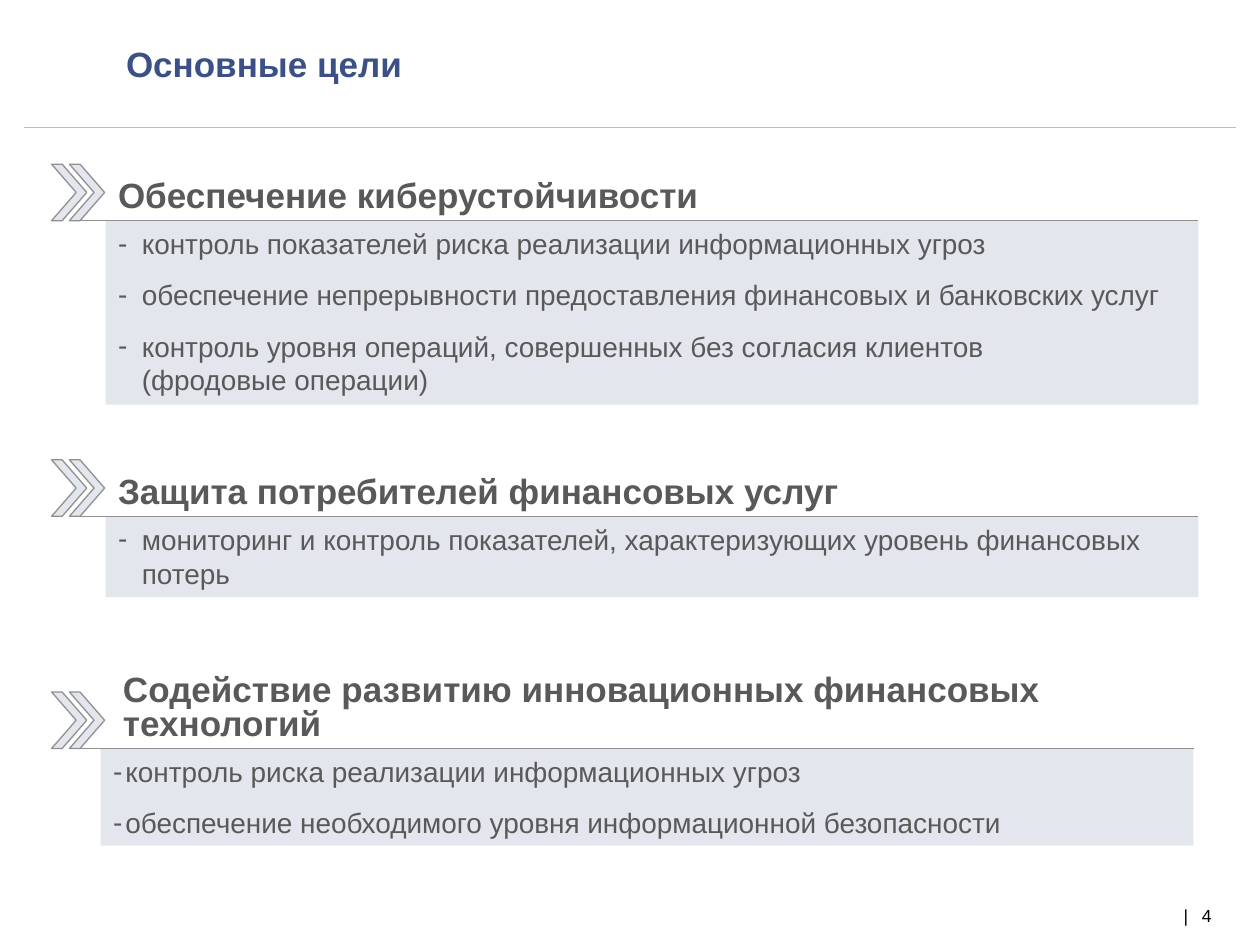
from lxml import etree
from pptx import Presentation
from pptx.dml.color import RGBColor
from pptx.enum.shapes import MSO_CONNECTOR, MSO_SHAPE
from pptx.enum.text import MSO_ANCHOR, PP_ALIGN
from pptx.oxml.ns import qn
from pptx.util import Cm, Pt

STRAIGHT = MSO_CONNECTOR.STRAIGHT
CHEVRON, RECT = MSO_SHAPE.CHEVRON, MSO_SHAPE.RECTANGLE
TOP, MIDDLE = MSO_ANCHOR.TOP, MSO_ANCHOR.MIDDLE
LEFT, RIGHT = PP_ALIGN.LEFT, PP_ALIGN.RIGHT

FONT = "Arial"
NAVY, GREY, BLACK = "3A5086", "595959", "000000"
PALE, OUTLINE, RULE = "E3E7ED", "909090", "BCBCBC"

SECTIONS = [
    dict(y=4.45, title="Обеспечение киберустойчивости", panel_h=3.71,
         items=["контроль показателей риска реализации информационных угроз",
                "обеспечение непрерывности предоставления финансовых и банковских услуг",
                "контроль уровня операций, совершенных без согласия клиентов\n"
                "(фродовые операции)"]),
    dict(y=10.41, title="Защита потребителей финансовых услуг", panel_h=1.63,
         items=["мониторинг и контроль показателей, характеризующих уровень "
                "финансовых потерь"]),
    dict(y=15.09, title="Содействие развитию инновационных финансовых технологий",
         panel_h=1.96, title_h=1.63, title_dx=0.1, spacing=0.8,
         panel_dx=-0.1, indent=0.25,
         items=["контроль риска реализации информационных угроз",
                "обеспечение необходимого уровня информационной безопасности"]),
]


def rgb(value):
    return RGBColor.from_string(value)


def add_run(p, text, size, color, bold=False):
    r = p.add_run()
    r.text = text
    r.font.name, r.font.size, r.font.bold = FONT, Pt(size), bold
    r.font.color.rgb = rgb(color)


def setup_frame(tf, anchor=TOP, wrap=True, inset=None):
    tf.word_wrap = wrap
    tf.vertical_anchor = anchor
    if inset is not None:
        tf.margin_left = tf.margin_right = Cm(inset)
        tf.margin_top = tf.margin_bottom = Cm(inset)


def add_line(s, x1, x2, y, color):
    line = s.shapes.add_connector(STRAIGHT, Cm(x1), Cm(y), Cm(x2), Cm(y))
    line.line.color.rgb = rgb(color)
    line.line.width = Pt(0.75)
    etree.SubElement(line._element.spPr, qn("a:effectLst"))


def add_filled(s, kind, x, y, w, h, outline=None):
    sp = s.shapes.add_shape(kind, Cm(x), Cm(y), Cm(w), Cm(h))
    sp.shadow.inherit = False
    sp.fill.solid()
    sp.fill.fore_color.rgb = rgb(PALE)
    if outline:
        sp.line.color.rgb = rgb(outline)
        sp.line.width = Pt(0.75)
    else:
        sp.line.fill.background()
    return sp


def set_dash(p, indent):
    pPr = p._p.get_or_add_pPr()
    pPr.set("marL", str(Cm(indent)))
    pPr.set("indent", str(-Cm(indent)))
    etree.SubElement(pPr, qn("a:buFont")).set("typeface", FONT)
    etree.SubElement(pPr, qn("a:buChar")).set("char", "-")


def add_panel(s, x, y, w, h, items, indent):
    tf = add_filled(s, RECT, x, y, w, h).text_frame
    setup_frame(tf)
    for i, item in enumerate(items):
        p = tf.add_paragraph() if i else tf.paragraphs[0]
        p.alignment = LEFT
        if i:
            p.space_before = Pt(10)
        set_dash(p, indent)
        for n, text in enumerate(item.split("\n")):
            if n:
                p.add_line_break()
            add_run(p, text, 16, GREY)


def add_section(s, x, y, w, title, items, panel_h, title_h=1.12, title_dx=0,
                spacing=None, panel_dx=0, indent=0.48):
    text_x = x + 1.09
    panel_x, panel_w = text_x + panel_dx, w - 1.09
    sp = s.shapes.add_textbox(Cm(text_x + title_dx), Cm(y + 0.04 - title_h),
                              Cm(20.85), Cm(title_h))
    setup_frame(sp.text_frame)
    p = sp.text_frame.paragraphs[0]
    p.line_spacing = spacing
    add_run(p, title, 20, GREY, True)

    for dx in (0.36, 0):
        sp = add_filled(s, CHEVRON, x + dx, y - 1.14, 0.71, 1.14, OUTLINE)
        sp.adjustments[0] = 0.7
    add_panel(s, panel_x, y, panel_w, panel_h, items, indent)
    add_line(s, panel_x - 0.6, panel_x + panel_w, y, OUTLINE)


def add_header(s, x, y, w, h):
    sp = s.shapes.title
    sp.left, sp.top, sp.width, sp.height = Cm(x), Cm(y), Cm(w), Cm(h)
    setup_frame(sp.text_frame, MIDDLE, inset=0)
    p = sp.text_frame.paragraphs[0]
    p.alignment = LEFT
    add_run(p, "Основные цели", 20, NAVY, True)
    add_line(s, 0.48, 24.92, 2.57, RULE)


def add_footer(s, x, y, h):
    for text, dx, w, align in (("|", 0, 0.1, RIGHT), ("4", 0.38, 0.58, LEFT)):
        sp = s.shapes.add_textbox(Cm(x + dx), Cm(y), Cm(w), Cm(h))
        setup_frame(sp.text_frame, MIDDLE, wrap=False, inset=0)
        p = sp.text_frame.paragraphs[0]
        p.alignment = align
        add_run(p, text, 10, BLACK)


def main():
    prs = Presentation()
    prs.slide_width, prs.slide_height = Cm(25.4), Cm(19.05)
    s = prs.slides.add_slide(prs.slide_layouts[5])
    add_header(s, 2.54, 0.86, 22.38, 0.86)
    for section in SECTIONS:
        add_section(s, x=1.04, w=23.12, **section)
    add_footer(s, 23.85, 18.2, 0.5)
    prs.save("out.pptx")


if __name__ == "__main__":
    main()
